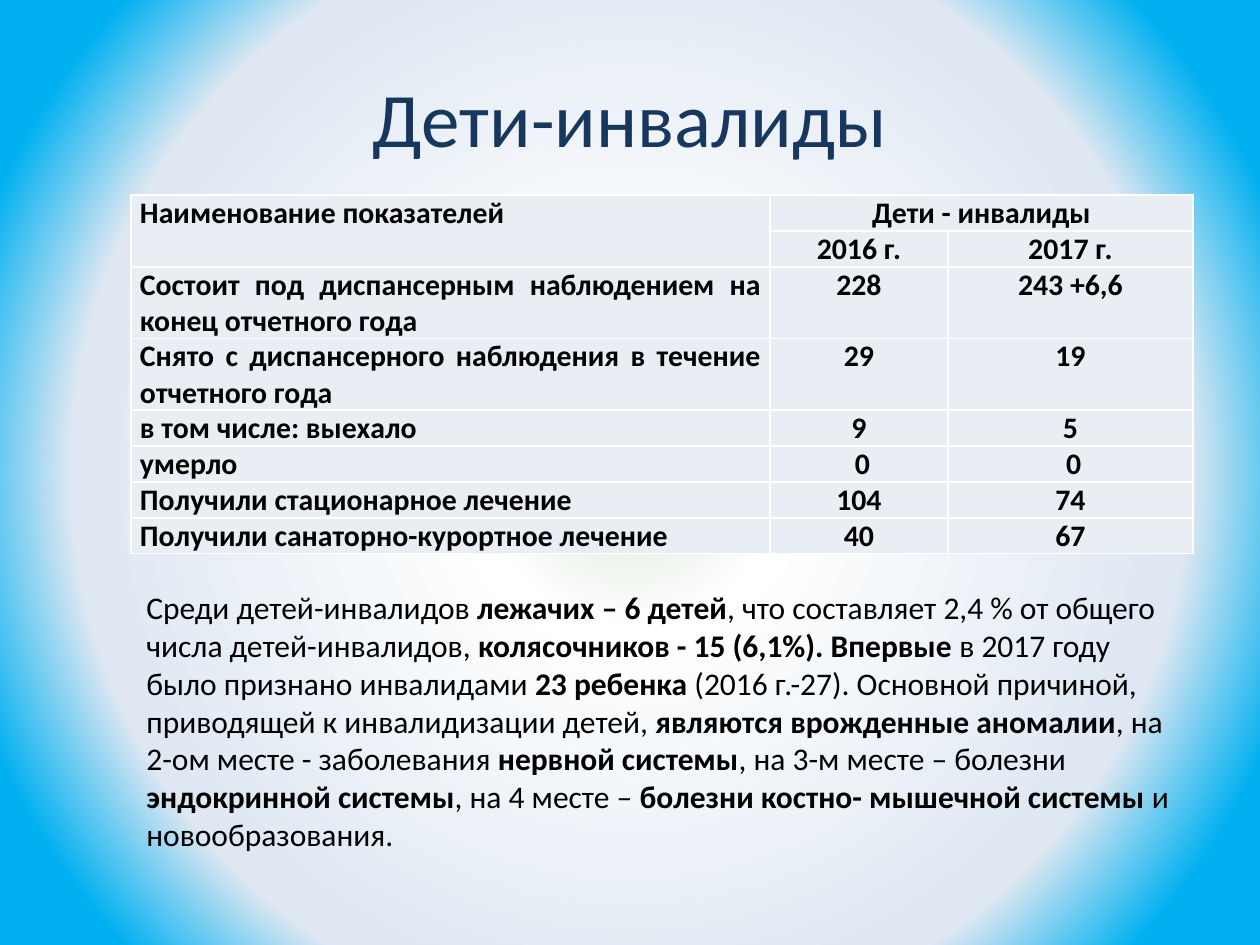
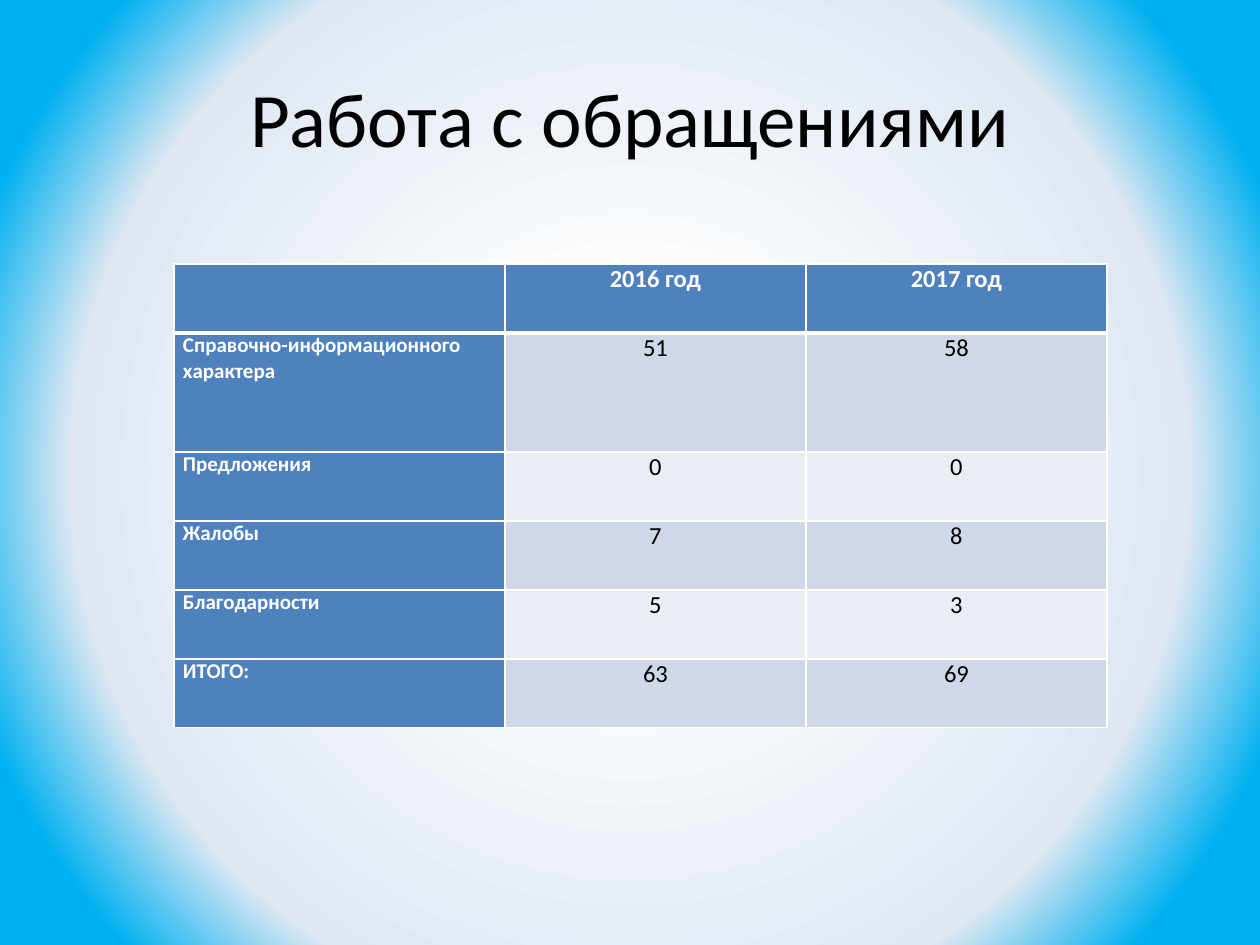
from dataclasses import dataclass
from typing import NamedTuple

from lxml import etree
from pptx import Presentation
from pptx import util as u
from pptx.dml import color
from pptx.enum import text
from pptx.oxml import ns, parse_xml

EMU_PER_PX = 914400 / 126
FONT = "Calibri"
COLORS = {
    "black": "000000",
    "white": "FFFFFF",
    "navy": "17375E",
    "header": "4F81BD",
    "band_dark": "D0D8E8",
    "band_light": "E9EDF4",
    "bg_core": "E4ECE1",
    "bg_ring": "DEE7F2",
    "bg_edge": "00B0F0",
}
BG_STOPS = [(5, "bg_core", 100), (20, "white", 100), (71, "bg_ring", 80), (88, "bg_edge", 100)]
CENTER, JUSTIFY, LEFT = text.PP_ALIGN.CENTER, text.PP_ALIGN.JUSTIFY, text.PP_ALIGN.LEFT


class Box(NamedTuple):
    x: int
    y: int
    w: int
    h: int


class Look(NamedTuple):
    size: int
    color: str = "black"
    bold: bool = False
    fill: str = "band_light"
    align: int = CENTER


@dataclass
class TableSpec:
    x: int
    y: int
    cols: list[int]
    rows: list[int]
    cells: list[list[str]]
    looks: list[list[Look]]
    merges: tuple = ()
    header_line: int = 1


TITLE_BOX = Box(63, 38, 1134, 158)
BODY_BOX = Box(134, 582, 1062, 280)

CHILDREN_CELLS = [
    ["Наименование показателей", "Дети - инвалиды", ""],
    ["", "2016 г.", "2017 г."],
    ["Состоит под диспансерным наблюдением на конец отчетного года", "228", "243 +6,6"],
    ["Снято с диспансерного наблюдения в течение отчетного года", "29", "19"],
    ["в том числе: выехало", "9", "5"],
    ["умерло", " 0", " 0"],
    ["Получили стационарное лечение", "104", "74"],
    ["Получили санаторно-курортное лечение", "40", "67"],
]
REQUEST_CELLS = [
    ["", "2016 год", "2017 год"],
    ["Справочно-информационного характера", "51", "58"],
    ["Предложения", "0", "0"],
    ["Жалобы", "7", "8"],
    ["Благодарности", "5", "3"],
    ["ИТОГО:", "63", "69"],
]
PLAIN_BOLD_RUNS = [
    "Среди детей-инвалидов ",
    "лежачих – 6 детей",
    ", что составляет 2,4 % от общего числа детей-инвалидов, ",
    "колясочников - 15 (6,1%). Впервые",
    " в 2017 году было признано инвалидами ",
    "23 ребенка ",
    "(2016 г.-27). Основной причиной, приводящей к инвалидизации детей, ",
    "являются врожденные аномалии",
    ", на 2-ом месте - заболевания ",
    "нервной системы",
    ", на 3-м месте – болезни ",
    "эндокринной системы",
    ", на 4 месте – ",
    "болезни костно- мышечной системы ",
    "и новообразования.",
]


def px(n: int) -> u.Emu:
    return u.Emu(round(n * EMU_PER_PX))


def rgb(name: str) -> color.RGBColor:
    return color.RGBColor.from_string(COLORS[name])


def add_run(p, words: str, size: int, color_name: str = "black", bold: bool = False) -> None:
    r = p.add_run()
    r.text = words
    r.font.name = FONT
    r.font.size = u.Pt(size)
    r.font.bold = bold
    r.font.color.rgb = rgb(color_name)


def add_text_box(slide, box: Box, anchor, align):
    tf = slide.shapes.add_textbox(*map(px, box)).text_frame
    tf.word_wrap = True
    tf.vertical_anchor = anchor
    p = tf.paragraphs[0]
    p.alignment = align
    return p


def set_background(slide) -> None:
    stops = "".join(
        f'<a:gs pos="{pos * 1000}"><a:srgbClr val="{COLORS[name]}">'
        f'<a:alpha val="{alpha * 1000}"/></a:srgbClr></a:gs>'
        for pos, name, alpha in BG_STOPS
    )
    bg = parse_xml(
        f'<p:bg {ns.nsdecls("p", "a")}><p:bgPr><a:gradFill rotWithShape="1">'
        f'<a:gsLst>{stops}</a:gsLst><a:path path="circle">'
        '<a:fillToRect l="50000" t="50000" r="50000" b="50000"/></a:path>'
        "</a:gradFill><a:effectLst/></p:bgPr></p:bg>"
    )
    slide.element.cSld.insert(0, bg)


def add_titled_slide(prs, title: str, color_name: str):
    slide = prs.slides.add_slide(prs.slide_layouts[6])
    set_background(slide)
    p = add_text_box(slide, TITLE_BOX, text.MSO_ANCHOR.MIDDLE, CENTER)
    add_run(p, title, 44, color_name)
    return slide


def set_borders(cell, top: int, bottom: int) -> None:
    tc_pr = cell._tc.get_or_add_tcPr()
    widths = {"lnL": 1, "lnR": 1, "lnT": top, "lnB": bottom}
    for i, (tag, width) in enumerate(widths.items()):
        ln = etree.Element(ns.qn(f"a:{tag}"), w=str(u.Pt(width)))
        fill = etree.SubElement(ln, ns.qn("a:solidFill"))
        etree.SubElement(fill, ns.qn("a:srgbClr"), val=COLORS["white"])
        tc_pr.insert(i, ln)


def add_table(slide, spec: TableSpec) -> None:
    size = map(px, (spec.x, spec.y, sum(spec.cols), sum(spec.rows)))
    table = slide.shapes.add_table(len(spec.rows), len(spec.cols), *size).table
    table.first_row = table.horz_banding = False
    for col, width in zip(table.columns, spec.cols):
        col.width = px(width)
    for row, height in zip(table.rows, spec.rows):
        row.height = px(height)
    for i, (words_row, look_row) in enumerate(zip(spec.cells, spec.looks)):
        for j, (words, look) in enumerate(zip(words_row, look_row)):
            cell = table.cell(i, j)
            cell.margin_left = cell.margin_right = px(9)
            cell.margin_top = cell.margin_bottom = 0
            cell.fill.solid()
            cell.fill.fore_color.rgb = rgb(look.fill)
            set_borders(cell, spec.header_line if i == 1 else 1, spec.header_line if i == 0 else 1)
            if words:
                p = cell.text_frame.paragraphs[0]
                p.alignment = look.align
                add_run(p, words, look.size, look.color, look.bold)
    for first, last in spec.merges:
        table.cell(*first).merge(table.cell(*last))


def build_children_slide(prs) -> None:
    slide = add_titled_slide(prs, "Дети-инвалиды", "navy")
    p = add_text_box(slide, BODY_BOX, text.MSO_ANCHOR.TOP, LEFT)
    for i, words in enumerate(PLAIN_BOLD_RUNS):
        add_run(p, words, 18, bold=i % 2 == 1)
    value = Look(17, bold=True)
    looks = [[value._replace(align=JUSTIFY), value, value]] * len(CHILDREN_CELLS)
    rows = [36, 36, 71, 71] + [36] * 4
    merges = (((0, 0), (1, 0)), ((0, 1), (0, 2)))
    add_table(slide, TableSpec(131, 195, [639, 178, 245], rows, CHILDREN_CELLS, looks, merges))


def build_requests_slide(prs) -> None:
    slide = add_titled_slide(prs, "Работа с обращениями", "black")
    head = Look(14, "white", True, "header")
    label = head._replace(size=12, align=JUSTIFY)
    looks = [[head] * 3]
    for i in range(1, len(REQUEST_CELLS)):
        value = Look(14, fill="band_dark" if i % 2 else "band_light")
        looks.append([label, value, value])
    rows = [69, 119] + [69] * 4
    add_table(slide, TableSpec(174, 264, [331, 301, 301], rows, REQUEST_CELLS, looks, header_line=3))


def main() -> None:
    prs = Presentation()
    prs.slide_width, prs.slide_height = px(1260), px(945)
    build_children_slide(prs)
    build_requests_slide(prs)
    prs.save("out.pptx")


if __name__ == "__main__":
    main()
